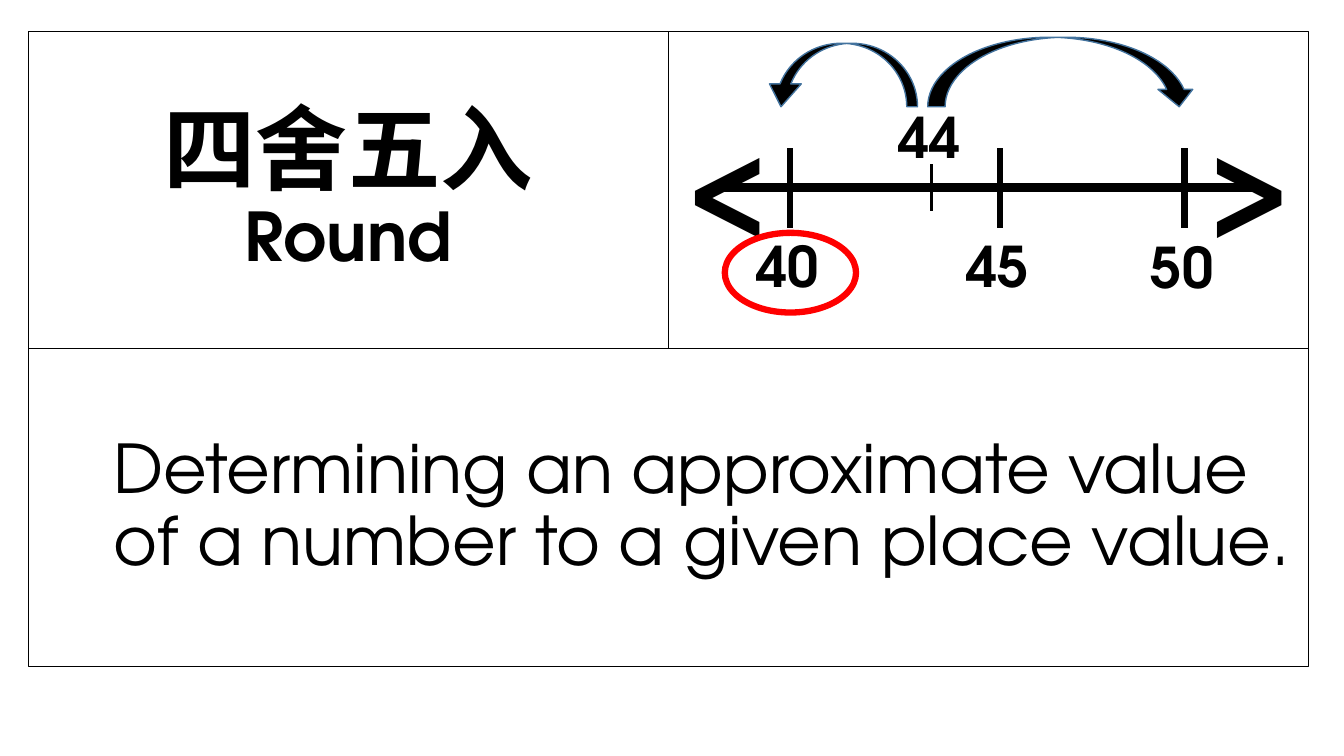
import pptx
import pptx.util
import pptx.dml.color
import pptx.enum.shapes
import pptx.enum.text
import pptx.oxml.ns
import lxml.etree
from collections import namedtuple
from dataclasses import dataclass

Inches, Pt = pptx.util.Inches, pptx.util.Pt
RGB = pptx.dml.color.RGBColor
Shape = pptx.enum.shapes.MSO_SHAPE
Align = pptx.enum.text.PP_ALIGN
Anchor = pptx.enum.text.MSO_ANCHOR
qn = pptx.oxml.ns.qn


@dataclass(frozen=True)
class Theme:
    ink: RGB = RGB(0, 0, 0)
    ring: RGB = RGB(0xFF, 0, 0)
    edge: RGB = RGB(0x43, 0x73, 0x9E)
    font: str = "TeX Gyre Adventor"
    han: str = "Roboto"
    alt: str = "Calibri"
    tip: int = 80
    term: int = 66
    body: int = 48
    mark: int = 40


THEME = Theme()


class Box(namedtuple("Box", "left top width height")):
    def inner(self, x, y, w, h):
        """Box inside this one, given in percent of its size."""
        return Box(self.left + self.width * x / 100,
                   self.top + self.height * y / 100,
                   self.width * w / 100, self.height * h / 100)

    def place(self):
        return [Inches(v) for v in self]


def style(run, size, bold=True, font=THEME.font):
    run.font.name = font
    run.font.size = Pt(size)
    run.font.bold = bold
    run.font.color.rgb = THEME.ink


def draw(slide, kind, box, line, width, fill=None):
    item = slide.shapes.add_shape(kind, *box.place())
    item.shadow.inherit = False
    if fill is None:
        item.fill.background()
    else:
        item.fill.solid()
        item.fill.fore_color.rgb = fill
    item.line.color.rgb = line
    item.line.width = Pt(width)
    return item


def panel(slide, box):
    frame = draw(slide, Shape.RECTANGLE, box, THEME.ink, 0.75).text_frame
    frame.word_wrap = True
    frame.vertical_anchor = Anchor.MIDDLE
    return frame


def label(slide, box, text, size, anchor=Anchor.TOP):
    frame = slide.shapes.add_textbox(*box.place()).text_frame
    frame.word_wrap = True
    frame.vertical_anchor = anchor
    frame.text = text
    para = frame.paragraphs[0]
    para.alignment = Align.CENTER
    style(para.runs[0], size)
    return para


def stroke(slide, box, width):
    """Straight line from the top left to the bottom right of the box."""
    x, y, w, h = box.place()
    line = slide.shapes.add_connector(
        pptx.enum.shapes.MSO_CONNECTOR.STRAIGHT, x, y, x + w, y + h)
    line.line.color.rgb = THEME.ink
    line.line.width = Pt(width)
    lxml.etree.SubElement(line._element.spPr, qn("a:effectLst"))


def term(slide, box):
    para = panel(slide, box).paragraphs[0]
    para.alignment = Align.CENTER
    para.line_spacing = 0.9
    for text, font in (("四", THEME.han), ("舍", THEME.alt), ("五入", THEME.han)):
        run = para.add_run()
        run.text = text
        style(run, THEME.term, font=font)
    para.add_line_break()
    run = para.add_run()
    run.text = "Round"
    style(run, THEME.body)


def meaning(slide, box):
    frame = panel(slide, box)
    frame.text = ("Determining an approximate value "
                  "of a number to a given place value.")
    para = frame.paragraphs[0]
    para.alignment = Align.LEFT
    para.line_spacing = 0.9
    props = para._p.get_or_add_pPr()
    props.set("marL", str(Inches(0.75)))
    props.set("indent", "0")
    style(para.runs[0], THEME.body, bold=False)


def scale(slide, box):
    panel(slide, box)

    # Axis with its two open tips
    for text, mid in (("<", 9.3), (">", 90.7)):
        tip = label(slide, box.inner(mid - 8, 0, 16, 100), text,
                    THEME.tip, Anchor.MIDDLE)
        tip.line_spacing = 0.9
    stroke(slide, box.inner(8.5, 49.2, 83.2, 0), 6)

    # Ticks and numbers: text, tick x, tick top, tick height, width, text top
    marks = (("40", 19, 36.8, 25.1, 4.5, 61.6),
             ("45", 51.8, 36.8, 25.1, 4.5, 61.6),
             ("50", 80.6, 36.8, 25.1, 4.5, 61.9),
             ("44", 41.1, 41.9, 14.6, 2.25, 21))
    for text, x, top, tall, width, row in marks:
        stroke(slide, box.inner(x, top, 0, tall), width)
        label(slide, box.inner(x - 7.2, row, 13.7, 25), text, THEME.mark)

    # Jumps from 44 to either side
    draw(slide, Shape.CURVED_DOWN_ARROW, box.inner(40.5, 1.9, 42, 21.9),
         THEME.edge, 1, THEME.ink)
    back = draw(slide, Shape.CURVED_DOWN_ARROW, box.inner(15.1, 3.8, 23.8, 20),
                THEME.edge, 1, THEME.ink)
    for spot, value in enumerate((0.17, 0.5, 0.36)):
        back.adjustments[spot] = value
    back._element.spPr.find(qn("a:xfrm")).set("flipH", "1")

    # Ring round the answer
    draw(slide, Shape.OVAL, box.inner(8.8, 63.5, 20.5, 25.1), THEME.ring, 4.5)


def main():
    deck = pptx.Presentation()
    deck.slide_width, deck.slide_height = Inches(13.33), Inches(7.5)
    slide = deck.slides.add_slide(deck.slide_layouts[6])
    card = Box(0.28, 0.31, 12.7, 6.3)
    term(slide, card.inner(0, 0, 50, 50))
    scale(slide, card.inner(50, 0, 50, 50))
    meaning(slide, card.inner(0, 50, 100, 50))
    deck.save("out.pptx")


if __name__ == "__main__":
    main()
